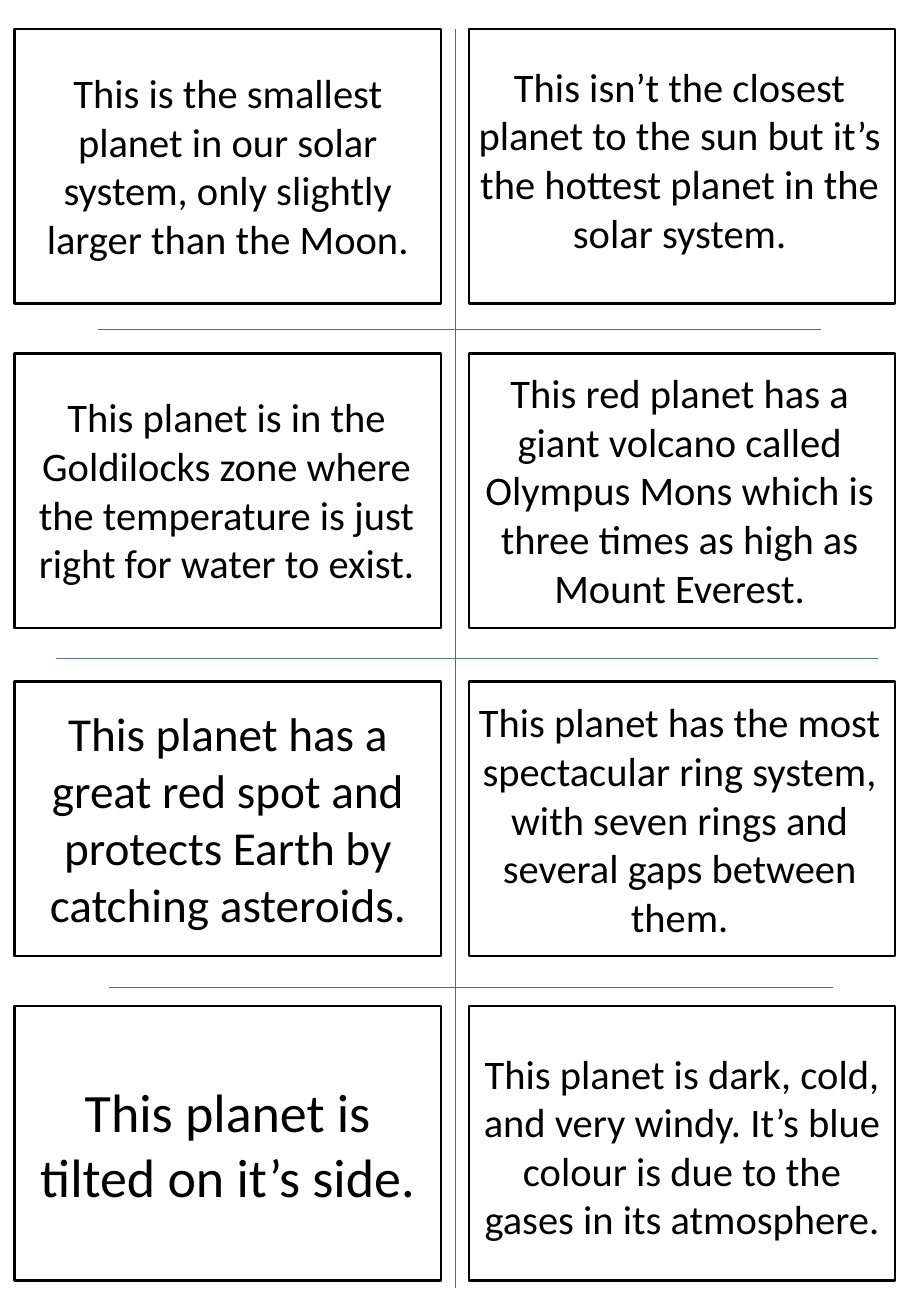
from dataclasses import dataclass

import pptx
import pptx.dml.color
import pptx.enum.shapes
import pptx.enum.text
import pptx.oxml.ns
import pptx.slide
import pptx.util
from lxml import etree
from pptx.util import Inches

BLACK = pptx.dml.color.RGBColor(0x00, 0x00, 0x00)
GREY = pptx.dml.color.RGBColor(0x66, 0x66, 0x66)
BLUE = pptx.dml.color.RGBColor(0x44, 0x72, 0xC4)

CARD_WIDTH, CARD_HEIGHT = 3.51, 2.26
COLUMN_LEFTS = (0.12, 3.86)
ROW_TOPS = (0.24, 2.91, 5.61, 8.28)


@dataclass
class Clue:
    text: str
    left: float
    top: float
    height: float = 1.72
    size: int = 24


@dataclass
class CutLine:
    start: tuple[float, float]
    end: tuple[float, float]
    color: pptx.dml.color.RGBColor = GREY


CUT_LINES = [
    CutLine((3.75, 0.24), (3.75, 10.6)),
    CutLine((0.46, 5.42), (7.23, 5.42), BLUE),
    CutLine((0.81, 2.71), (6.76, 2.71)),
    CutLine((0.9, 8.13), (6.86, 8.13)),
]

# Clues run left to right, then down the rows
CLUES = [
    Clue("This is the smallest planet in our solar system, only slightly larger than the Moon.", 0.12, 0.51),
    Clue("This isn’t the closest planet to the sun but it’s the hottest planet in the solar system.", 3.84, 0.46),
    Clue("This planet is in the Goldilocks zone where the temperature is just right for water to exist.", 0.11, 3.18),
    Clue("This red planet has a giant volcano called Olympus Mons which is three times as high as Mount Everest.",
         3.84, 2.98, 2.12),
    Clue("This planet has a great red spot and protects Earth by catching asteroids.", 0.12, 5.75, 1.99, 28),
    Clue("This planet has the most spectacular ring system, with seven rings and several gaps between them.",
         3.84, 5.69, 2.12),
    Clue("This planet is tilted on it’s side.", 0.12, 8.83, 1.18, 32),
    Clue("This planet is dark, cold, and very windy. It’s blue colour is due to the gases in its atmosphere.",
         3.86, 8.58),
]


def draw_cut_line(slide: pptx.slide.Slide, cut_line: CutLine) -> None:
    points = [Inches(value) for value in cut_line.start + cut_line.end]
    connector = slide.shapes.add_connector(pptx.enum.shapes.MSO_CONNECTOR.STRAIGHT, *points)
    connector.line.color.rgb = cut_line.color
    connector.line.width = pptx.util.Pt(0.5)
    etree.SubElement(connector._element.spPr, pptx.oxml.ns.qn("a:effectLst"))


def draw_clue(slide: pptx.slide.Slide, clue: Clue) -> None:
    box = slide.shapes.add_textbox(
        Inches(clue.left), Inches(clue.top), Inches(CARD_WIDTH), Inches(clue.height))
    frame = box.text_frame
    frame.word_wrap = True
    frame.auto_size = pptx.enum.text.MSO_AUTO_SIZE.SHAPE_TO_FIT_TEXT
    paragraph = frame.paragraphs[0]
    paragraph.alignment = pptx.enum.text.PP_ALIGN.CENTER
    run = paragraph.add_run()
    run.text = clue.text
    for name, value in {"name": "Calibri", "size": pptx.util.Pt(clue.size)}.items():
        setattr(run.font, name, value)
    run.font.color.rgb = BLACK


def draw_card_border(slide: pptx.slide.Slide, left: float, top: float) -> None:
    shape = slide.shapes.add_shape(
        pptx.enum.shapes.MSO_SHAPE.RECTANGLE,
        Inches(left), Inches(top), Inches(CARD_WIDTH), Inches(CARD_HEIGHT))
    shape.shadow.inherit = False
    shape.fill.background()
    shape.line.color.rgb = BLACK
    shape.line.width = pptx.util.Pt(1.5)


def main() -> None:
    presentation = pptx.Presentation()
    presentation.slide_width = Inches(7.5)
    presentation.slide_height = Inches(10.83)
    slide = presentation.slides.add_slide(presentation.slide_layouts[6])

    # Lines between the cards
    for cut_line in CUT_LINES:
        draw_cut_line(slide, cut_line)

    # Cards: clue text with its border on top
    for index, clue in enumerate(CLUES):
        row, column = divmod(index, len(COLUMN_LEFTS))
        draw_clue(slide, clue)
        draw_card_border(slide, COLUMN_LEFTS[column], ROW_TOPS[row])

    presentation.save("out.pptx")


if __name__ == "__main__":
    main()
